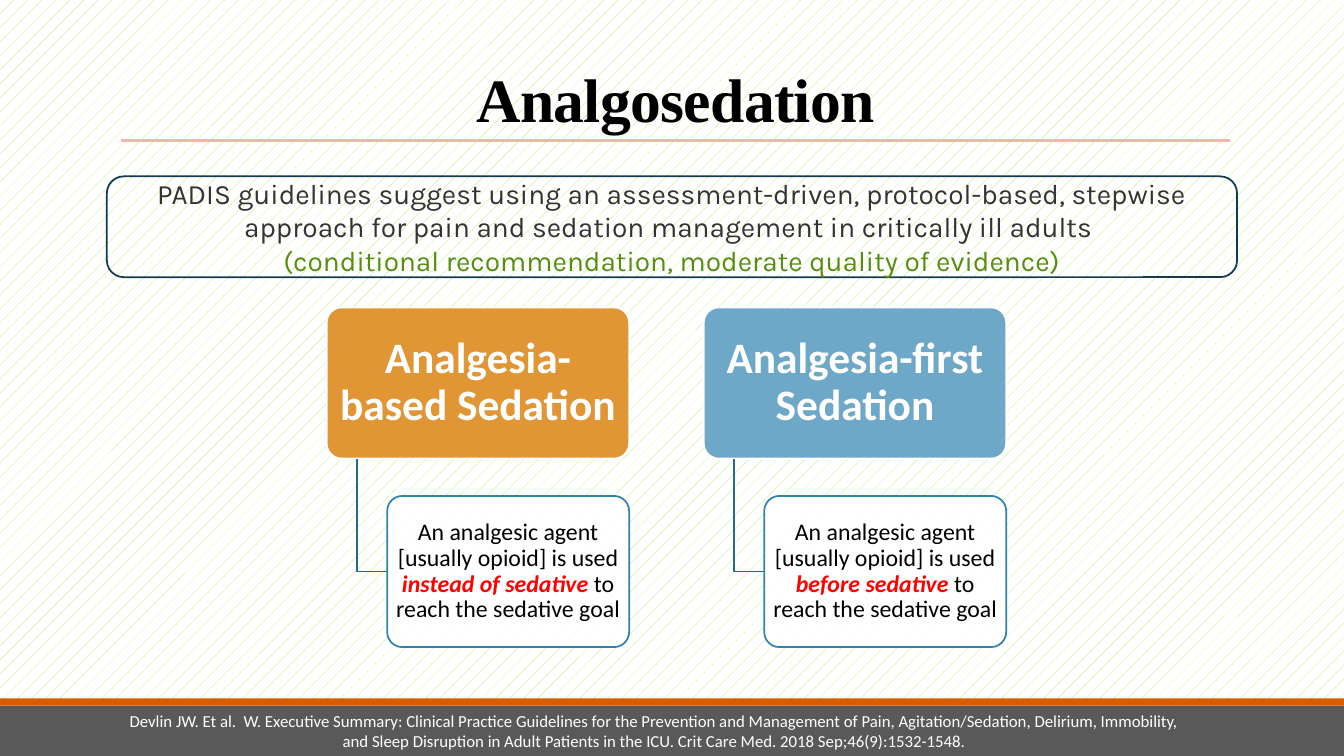
import pptx
import pptx.util
import pptx.dml.color
import pptx.enum.dml
import pptx.enum.shapes
import pptx.enum.text
import pptx.oxml
import pptx.oxml.ns

Inches = pptx.util.Inches
Pt = pptx.util.Pt
KIND = pptx.enum.shapes.MSO_SHAPE
ANCHOR = pptx.enum.text.MSO_ANCHOR
CENTER = pptx.enum.text.PP_ALIGN.CENTER

HUES = {
    "white": "FFFFFF", "black": "000000", "lime": "A7EA52", "gray": "595959",
    "rust": "D85C00", "pink": "F9B3A7", "amber": "E09634", "sky": "6EA8C8",
    "steel": "26698C", "blue": "3083AF", "navy": "15394D", "ink": "333333",
    "green": "568D11", "red": "FF0000",
}


def hue(name):
    return pptx.dml.color.RGBColor.from_string(HUES[name])


def paint(shape, fill=None, line=None):
    shape.shadow.inherit = False
    if fill:
        shape.fill.solid()
        shape.fill.fore_color.rgb = hue(fill)
    else:
        shape.fill.background()
    if line:
        shape.line.color.rgb = hue(line)
        shape.line.width = Pt(1.25)
    else:
        shape.line.fill.background()


def block(slide, kind, box, fill=None, line=None):
    shape = slide.shapes.add_shape(kind, *map(Inches, box))
    paint(shape, fill, line)
    return shape


def frame(shape, anchor, side=0.1, top=0.05):
    text = shape.text_frame
    text.word_wrap = True
    text.vertical_anchor = anchor
    text.margin_left = text.margin_right = Inches(side)
    text.margin_top = text.margin_bottom = Inches(top)
    return text


def write(para, runs, face, size, space=1.0):
    para.alignment = CENTER
    para.line_spacing = space
    for words, color, bold, slant in runs:
        run = para.add_run()
        run.text = words
        run.font.name = face
        run.font.size = Pt(size)
        run.font.bold = bold
        run.font.italic = slant
        run.font.color.rgb = hue(color)


def add_title(slide, box):
    left, top, width, height = box
    title = slide.shapes.title
    title.left, title.top, title.width, title.height = map(Inches, box)
    para = frame(title, ANCHOR.BOTTOM).paragraphs[0]
    write(para, [("Analgosedation", "black", True, False)], "Times New Roman", 44, 0.85)
    para.runs[0].font._element.set("spc", "-50")
    base = top + height
    rule = slide.shapes.add_connector(
        pptx.enum.shapes.MSO_CONNECTOR.STRAIGHT,
        *map(Inches, (left, base, left + width, base)))
    rule.line.color.rgb = hue("pink")
    rule.line.width = Pt(2.25)
    pptx.oxml.ns.qn("a:effectLst")
    rule._element.spPr.append(pptx.oxml.parse_xml(
        "<a:effectLst %s/>" % pptx.oxml.ns.nsdecls("a")))


def add_guide(slide, box):
    panel = block(slide, KIND.ROUNDED_RECTANGLE, box, line="navy")
    text = frame(panel, ANCHOR.MIDDLE)
    advice = ("PADIS guidelines suggest using an assessment-driven, protocol-based, "
              "stepwise approach for pain and sedation management in critically ill adults ")
    grade = "(conditional recommendation, moderate quality of evidence)"
    write(text.paragraphs[0], [(advice, "ink", False, False)], "Karla", 20)
    write(text.add_paragraph(), [(grade, "green", False, False)], "Karla", 20)


def add_branch(slide, box, name, fill, timing):
    left, top, width, height = box
    tall = 1.5
    inset = width / 5
    low = top + height - tall
    stem = left + width / 10

    head = block(slide, KIND.ROUNDED_RECTANGLE, (left, top, width, tall), fill, "white")
    points = [(stem, top + tall), (stem, low + tall / 2), (left + inset, low + tall / 2)]
    points = [(Inches(x), Inches(y)) for x, y in points]
    path = slide.shapes.build_freeform(*points[0], scale=1.0)
    path.add_line_segments(points[1:], close=False)
    paint(path.convert_to_shape(), line="steel")
    card = block(slide, KIND.ROUNDED_RECTANGLE,
                 (left + inset, low, width - inset, tall), "white", "blue")
    tint = card._element.spPr.find(".//" + pptx.oxml.ns.qn("a:srgbClr"))
    tint.append(pptx.oxml.parse_xml(
        '<a:alpha %s val="90000"/>' % pptx.oxml.ns.nsdecls("a")))

    for shape in (head, card):
        shape.adjustments[0] = 0.1
    text = frame(head, ANCHOR.MIDDLE, 0.06, 0.04)
    write(text.paragraphs[0], [(name, "white", True, False)], "Calibri", 31, 0.9)
    text = frame(card, ANCHOR.MIDDLE, 0.04, 0.02)
    write(text.paragraphs[0], [
        ("An analgesic agent [usually opioid] is used ", "black", False, False),
        (timing + " sedative ", "red", True, True),
        ("to reach the sedative goal", "black", False, False),
    ], "Calibri", 17, 0.9)


def add_footer(slide, box):
    left, top, width, height = box
    block(slide, KIND.RECTANGLE, box, "gray")
    block(slide, KIND.RECTANGLE, (left, top - 0.07, width, 0.07), "rust")
    note = slide.shapes.add_textbox(*map(Inches, (left + 1.05, top, 10.88, height)))
    cite = ("Devlin JW. Et al.  W. Executive Summary: Clinical Practice Guidelines for the "
            "Prevention and Management of Pain, Agitation/Sedation, Delirium, Immobility, "
            "and Sleep Disruption in Adult Patients in the ICU. "
            "Crit Care Med. 2018 Sep;46(9):1532-1548.")
    text = frame(note, ANCHOR.TOP)
    write(text.paragraphs[0], [(cite, "white", False, False)], "Calibri", 12)


def main():
    deck = pptx.Presentation()
    deck.slide_width, deck.slide_height = Inches(13.33), Inches(7.5)
    slide = deck.slides.add_slide(deck.slide_layouts[5])
    back = slide.background.fill
    back.patterned()
    back.pattern = pptx.enum.dml.MSO_PATTERN.PERCENT_5
    back.fore_color.rgb = hue("lime")
    back.back_color.rgb = hue("white")

    add_footer(slide, (0, 7, 13.33, 0.5))
    add_title(slide, (1.2, 0.31, 11, 1.08))
    branches = [
        ("Analgesia-based Sedation", "amber", "instead of"),
        ("Analgesia-first Sedation", "sky", "before"),
    ]
    for i, branch in enumerate(branches):
        add_branch(slide, (3.24 + 3.74 * i, 3.05, 3, 3.37), *branch)
    add_guide(slide, (1.06, 1.75, 11.21, 1))
    deck.save("out.pptx")


if __name__ == "__main__":
    main()
